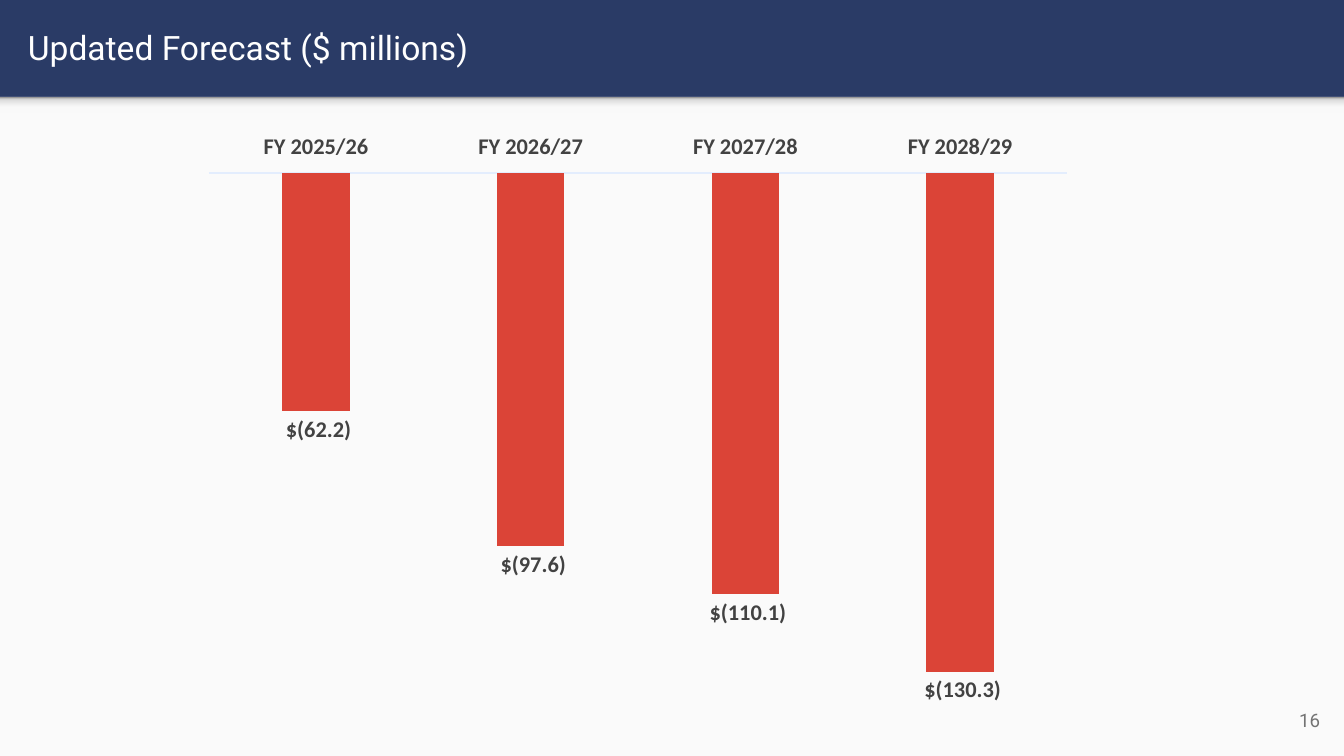
from dataclasses import dataclass

from lxml import etree
from pptx import Presentation
from pptx import util as u
from pptx.chart.data import CategoryChartData
from pptx.dml.color import RGBColor
from pptx.enum import chart as charts, shapes, text
from pptx.oxml import parse_xml
from pptx.oxml.ns import nsdecls, qn


@dataclass(frozen=True)
class Theme:
    navy: str = "2A3B66"
    paper: str = "FAFAFA"
    white: str = "FFFFFF"
    grey: str = "737373"
    ink: str = "424242"
    red: str = "DB4437"
    axis: str = "E3EDFD"
    shade: tuple = ((0, "F9F9F9"), (36, "F9F9F9"), (80, "DEDEDE"), (100, "999999"))
    text_font: str = "Roboto"
    chart_font: str = "Calibri"
    title_size: int = 18
    label_size: int = 12
    number_size: int = 10


THEME = Theme()
FORECAST = {
    "FY 2025/26": -62.2,
    "FY 2026/27": -97.6,
    "FY 2027/28": -110.1,
    "FY 2028/29": -130.3,
}
ACCOUNTING = r'_("$"* #,##0.0_);_("$"* \(#,##0.0\);_("$"* "-"??_);_(@_)'


def rgb(value):
    return RGBColor.from_string(value)


def inches(*lengths):
    return [u.Inches(length) for length in lengths]


def style_font(font, size, color, name, bold=False):
    font.size, font.name, font.bold = u.Pt(size), name, bold
    font.color.rgb = rgb(color)


def add_panel(slide, box, color):
    panel = slide.shapes.add_shape(shapes.MSO_SHAPE.RECTANGLE, *inches(*box))
    panel.shadow.inherit = False
    panel.fill.solid()
    panel.fill.fore_color.rgb = rgb(color)
    panel.line.fill.background()
    return panel


def shade_upward(panel, stops):
    """Replace the solid fill with a gradient running from bottom to top."""
    stop_xml = "".join(
        f'<a:gs pos="{at * 1000}"><a:srgbClr val="{color}"/></a:gs>'
        for at, color in stops
    )
    gradient = parse_xml(
        f'<a:gradFill {nsdecls("a")} rotWithShape="1"><a:gsLst>{stop_xml}</a:gsLst>'
        '<a:lin ang="16200000" scaled="0"/></a:gradFill>'
    )
    solid = panel.fill._xPr.find(qn("a:solidFill"))
    solid.getparent().replace(solid, gradient)


def add_text(slide, box, words, size, color, align=text.PP_ALIGN.LEFT):
    frame = slide.shapes.add_textbox(*inches(*box)).text_frame
    frame.word_wrap = True
    frame.vertical_anchor = text.MSO_ANCHOR.MIDDLE
    frame.margin_left = frame.margin_right = u.Inches(0.1)
    frame.margin_top = frame.margin_bottom = u.Inches(0.1)
    paragraph = frame.paragraphs[0]
    paragraph.alignment = align
    run = paragraph.add_run()
    run.text = words
    style_font(run.font, size, color, THEME.text_font)


def place_plot(chart, **fractions):
    """Fix the inner plot area as fractions of the chart frame."""
    plot_area = chart._chartSpace.chart.plotArea
    for layout in plot_area.findall(qn("c:layout")):
        plot_area.remove(layout)
    layout = etree.Element(qn("c:layout"))
    manual = etree.SubElement(layout, qn("c:manualLayout"))
    settings = {"layoutTarget": "inner", "xMode": "edge", "yMode": "edge", **fractions}
    for tag, value in settings.items():
        etree.SubElement(manual, qn(f"c:{tag}")).set("val", str(value))
    plot_area.insert(0, layout)


def add_forecast_chart(slide, box):
    data = CategoryChartData(number_format=ACCOUNTING)
    data.categories = list(FORECAST)
    data.add_series("Series 1", list(FORECAST.values()))
    chart = slide.shapes.add_chart(
        charts.XL_CHART_TYPE.COLUMN_CLUSTERED, *inches(*box), data
    ).chart
    chart.has_title = chart.has_legend = False
    label_format = (THEME.label_size, THEME.ink, THEME.chart_font, True)
    style_font(chart.font, *label_format)
    place_plot(chart, x=0.02, y=0.085, w=0.958, h=0.898)

    # Years above the zero line
    years = chart.category_axis
    years.major_tick_mark = years.minor_tick_mark = charts.XL_TICK_MARK.NONE
    years.tick_label_position = charts.XL_TICK_LABEL_POSITION.HIGH
    years.has_major_gridlines = False
    years.format.line.color.rgb = rgb(THEME.axis)
    years.format.line.width = u.Pt(0.75)
    style_font(years.tick_labels.font, *label_format)

    # Hidden dollar scale
    dollars = chart.value_axis
    dollars.minimum_scale, dollars.maximum_scale = -140, 0
    dollars.has_major_gridlines = False
    dollars.visible = False

    # Deficit columns and their values
    columns = chart.plots[0]
    columns.gap_width, columns.overlap = 219, -27
    columns.vary_by_categories = False
    deficit = columns.series[0]
    deficit.invert_if_negative = False
    deficit.format.fill.solid()
    deficit.format.fill.fore_color.rgb = rgb(THEME.red)
    values = deficit.data_labels
    values.show_value = True
    values.position = charts.XL_LABEL_POSITION.OUTSIDE_END
    values.number_format = ACCOUNTING
    values.number_format_is_linked = False
    style_font(values.font, *label_format)


def main():
    deck = Presentation()
    deck.slide_width, deck.slide_height = inches(10, 5.625)
    slide = deck.slides.add_slide(deck.slide_layouts[6])

    # Navy header, pale body and the shade below the header
    slide.background.fill.solid()
    slide.background.fill.fore_color.rgb = rgb(THEME.navy)
    add_panel(slide, (0, 0.72, 10, 4.91), THEME.paper)
    header_shade = add_panel(slide, (0, 0.72, 10, 0.12), THEME.paper)
    shade_upward(header_shade, THEME.shade)

    # Title and slide number
    add_text(slide, (0.11, 0.02, 9.65, 0.66), "Updated Forecast ($ millions)",
             size=THEME.title_size, color=THEME.white)
    add_text(slide, (9.32, 5.14, 0.6, 0.43), "16", size=THEME.number_size,
             color=THEME.grey, align=text.PP_ALIGN.RIGHT)

    add_forecast_chart(slide, (1.42, 0.91, 6.67, 4.44))
    deck.save("out.pptx")


if __name__ == "__main__":
    main()
